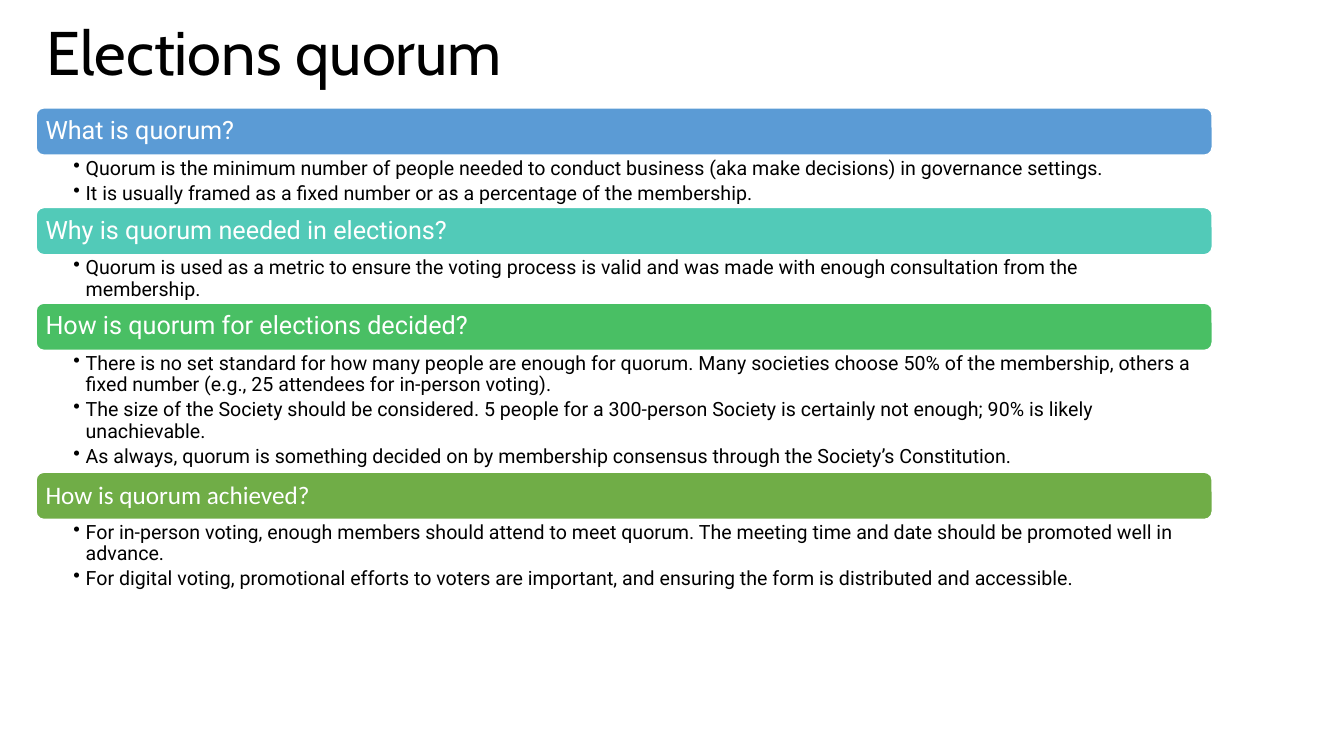
"""Build the Elections quorum slide: four heading bars with bullets below."""
from lxml import etree
from pptx import Presentation
from pptx.dml.color import RGBColor
from pptx.enum.shapes import MSO_SHAPE
from pptx.enum.text import MSO_ANCHOR, MSO_AUTO_SIZE, PP_ALIGN
from pptx.oxml.ns import qn
from pptx.util import Cm, Pt

ROUNDED = MSO_SHAPE.ROUNDED_RECTANGLE
MIDDLE = MSO_ANCHOR.MIDDLE
NO_FIT = MSO_AUTO_SIZE.NONE
LEFT = PP_ALIGN.LEFT

BLACK = RGBColor(0x00, 0x00, 0x00)
WHITE = RGBColor(0xFF, 0xFF, 0xFF)
BLUE = RGBColor(0x5B, 0x9B, 0xD5)
TEAL = RGBColor(0x52, 0xCA, 0xB8)
GREEN = RGBColor(0x49, 0xBF, 0x64)
OLIVE = RGBColor(0x70, 0xAD, 0x47)

X, WIDTH, BAR_HEIGHT = Cm(0.91), Cm(29.64), Cm(1.19)

SECTIONS = [
    ("What is quorum?", BLUE, "Roboto", Cm(1.32), [
        "Quorum is the minimum number of people needed to conduct business "
        "(aka make decisions) in governance settings.",
        "It is usually framed as a fixed number or as a percentage of the membership.",
    ]),
    ("Why is quorum needed in elections?", TEAL, "Roboto", Cm(1.22), [
        "Quorum is used as a metric to ensure the voting process is valid and "
        "was made with enough consultation from the membership.",
    ]),
    ("How is quorum for elections decided?", GREEN, "Roboto", Cm(3.07), [
        "There is no set standard for how many people are enough for quorum. "
        "Many societies choose 50% of the membership, others a fixed number "
        "(e.g., 25 attendees for in-person voting).",
        "The size of the Society should be considered. 5 people for a 300-person "
        "Society is certainly not enough; 90% is likely unachievable.",
        "As always, quorum is something decided on by membership consensus "
        "through the Society’s Constitution.",
    ]),
    ("How is quorum achieved?", OLIVE, "Calibri", Cm(1.85), [
        "For in-person voting, enough members should attend to meet quorum. "
        "The meeting time and date should be promoted well in advance.",
        "For digital voting, promotional efforts to voters are important, and "
        "ensuring the form is distributed and accessible.",
    ]),
]


def style(p, font, size, color):
    p.alignment = LEFT
    p.line_spacing = 0.9
    for r in p.runs:
        r.font.name = font
        r.font.size = Pt(size)
        r.font.color.rgb = color


def set_margins(tf, left, top, right, bottom):
    tf.margin_left, tf.margin_top = Cm(left), Cm(top)
    tf.margin_right, tf.margin_bottom = Cm(right), Cm(bottom)


prs = Presentation()
prs.slide_width, prs.slide_height = Cm(33.87), Cm(19.05)
s = prs.slides.add_slide(prs.slide_layouts[5])

title = s.shapes.title
title.left, title.top, title.width, title.height = X, Cm(0.15), Cm(27.69), Cm(2.51)
tf = title.text_frame
tf.text = "Elections quorum"
tf.auto_size = NO_FIT
tf.vertical_anchor = MIDDLE
style(tf.paragraphs[0], "Cabin", 44, BLACK)

y = Cm(2.72)
for heading, color, font, body_height, bullets in SECTIONS:
    bar = s.shapes.add_shape(ROUNDED, X, y, WIDTH, BAR_HEIGHT)
    bar.shadow.inherit = False
    bar.fill.solid()
    bar.fill.fore_color.rgb = color
    bar.line.color.rgb = WHITE
    bar.line.width = Pt(1)
    tf = bar.text_frame
    tf.text = heading
    tf.vertical_anchor = MIDDLE
    set_margins(tf, 0.18, 0.18, 0.18, 0.18)
    style(tf.paragraphs[0], font, 18, WHITE)
    y += BAR_HEIGHT

    body = s.shapes.add_textbox(X, y, WIDTH, body_height)
    tf = body.text_frame
    tf.word_wrap = True
    set_margins(tf, 0.94, 0.08, 0.36, 0.08)
    tf.text = "\n".join(bullets)
    for p in tf.paragraphs:
        pPr = p._p.get_or_add_pPr()
        pPr.set("marL", str(Cm(0.31)))
        pPr.set("indent", str(-Cm(0.31)))
        etree.SubElement(pPr, qn("a:buChar")).set("char", "•")
        p.level = 1
        p.space_after = Pt(2.8)
        style(p, "Roboto", 14, BLACK)
    y += body_height

prs.save("out.pptx")
